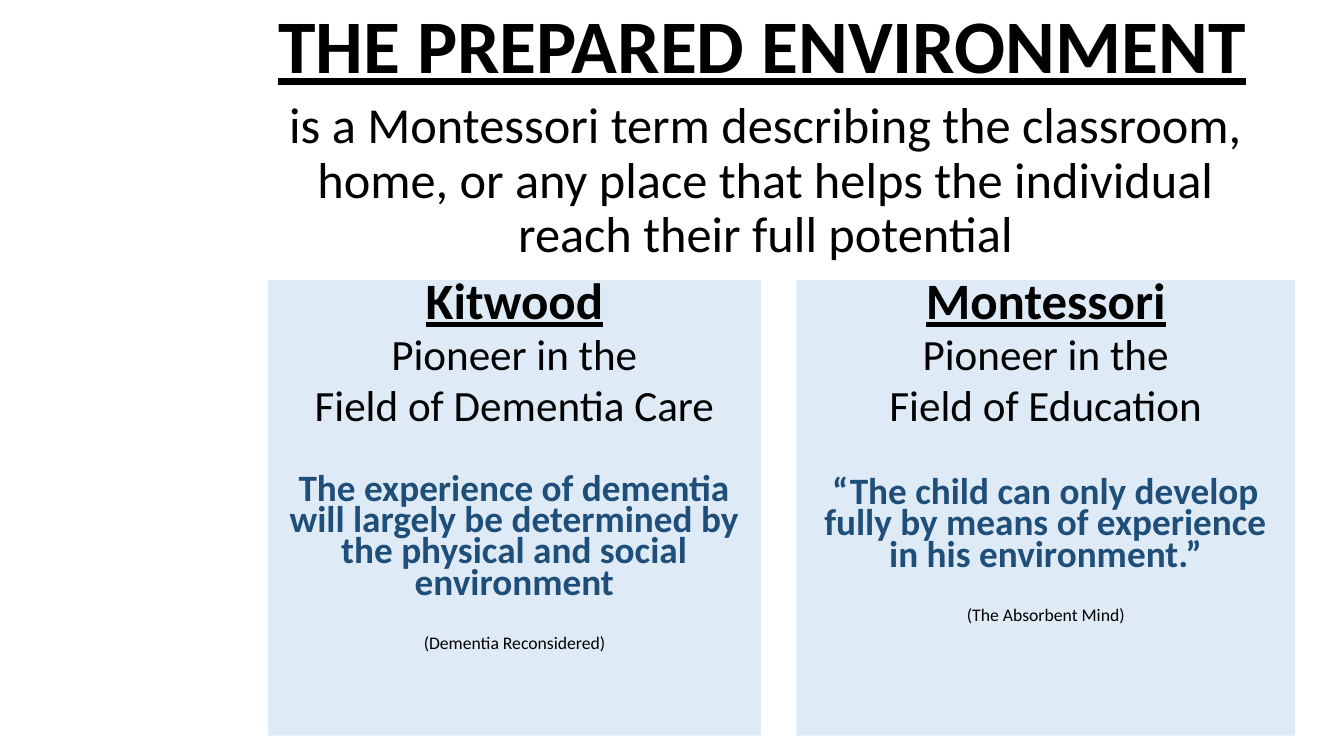
from pptx import Presentation
from pptx.dml.color import RGBColor
from pptx.enum.shapes import MSO_SHAPE
from pptx.enum.text import MSO_ANCHOR, PP_ALIGN
from pptx.util import Pt

BLACK = RGBColor(0x00, 0x00, 0x00)
NAVY = RGBColor(0x1F, 0x4E, 0x79)
PALE_BLUE = RGBColor(0xDE, 0xEB, 0xF7)

PANEL_TOP, PANEL_HEIGHT = 200, 325.4
NAME = {"size": Pt(36.4), "bold": True, "underline": True}
ROLE = {"size": Pt(30.8)}
QUOTE = {"size": Pt(26.6), "bold": True}
SOURCE = {"size": Pt(12.6)}


def format_font(font, formats, color=BLACK):
    font.name = "Calibri"
    font.color.rgb = color
    for attribute, value in formats.items():
        setattr(font, attribute, value)


def place(shape, left, top, width, height):
    shape.left, shape.top = Pt(left), Pt(top)
    shape.width, shape.height = Pt(width), Pt(height)


def add_heading(slide, text, box):
    title = slide.shapes.title
    place(title, *box)
    title.text_frame.text = text
    title.text_frame.vertical_anchor = MSO_ANCHOR.TOP
    paragraph = title.text_frame.paragraphs[0]
    paragraph.alignment = PP_ALIGN.LEFT
    paragraph.line_spacing = 1.0
    format_font(paragraph.runs[0].font, {"size": Pt(54), "bold": True, "underline": True})


def add_definition(slide, text, box):
    frame = slide.shapes.add_textbox(*map(Pt, box)).text_frame
    frame.word_wrap = True
    frame.vertical_anchor = MSO_ANCHOR.MIDDLE
    frame.text = text
    paragraph = frame.paragraphs[0]
    paragraph.alignment = PP_ALIGN.CENTER
    paragraph.line_spacing = 0.9
    format_font(paragraph.runs[0].font, {"size": Pt(36)})


def add_pioneer_panel(slide, box, name, field, quote, source, quote_gap):
    """Place a filled panel: name, role, quote (quote_gap points below) and its source."""
    panel = slide.shapes.add_shape(MSO_SHAPE.RECTANGLE, *map(Pt, box))
    panel.shadow.inherit = False
    panel.fill.solid()
    panel.fill.fore_color.rgb = PALE_BLUE
    panel.line.fill.background()
    frame = panel.text_frame
    frame.word_wrap = True
    frame.vertical_anchor = MSO_ANCHOR.TOP
    lines = [
        (name, NAME, BLACK, 0),
        ("Pioneer in the", ROLE, BLACK, 10),
        (field, ROLE, BLACK, 10),
        (quote, QUOTE, NAVY, quote_gap),
        (source, SOURCE, BLACK, 26),
    ]
    for index, (text, formats, color, gap) in enumerate(lines):
        paragraph = frame.add_paragraph() if index else frame.paragraphs[0]
        paragraph.alignment = PP_ALIGN.CENTER
        paragraph.line_spacing = 0.7
        paragraph.space_before = Pt(gap)
        run = paragraph.add_run()
        run.text = text
        format_font(run.font, formats, color)


def main():
    presentation = Presentation()
    presentation.slide_width, presentation.slide_height = Pt(960), Pt(540)
    slide = presentation.slides.add_slide(presentation.slide_layouts[5])
    add_definition(
        slide,
        "is a Montessori term describing the classroom, home, or any place "
        "that helps the individual reach their full potential",
        (180, 65, 733.7, 130),
    )
    add_pioneer_panel(
        slide, (191.5, PANEL_TOP, 352, PANEL_HEIGHT),
        "Kitwood", "Field of Dementia Care",
        "The experience of dementia will largely be determined by "
        "the physical and social environment",
        "(Dementia Reconsidered)", 34.3,
    )
    add_pioneer_panel(
        slide, (568.8, PANEL_TOP, 356.4, PANEL_HEIGHT),
        "Montessori", "Field of Education",
        "“The child can only develop fully by means of experience in his environment.”",
        "(The Absorbent Mind)", 36.7,
    )
    add_heading(slide, "THE PREPARED ENVIRONMENT", (191.5, -5, 713, 72.7))
    presentation.save("out.pptx")


if __name__ == "__main__":
    main()
